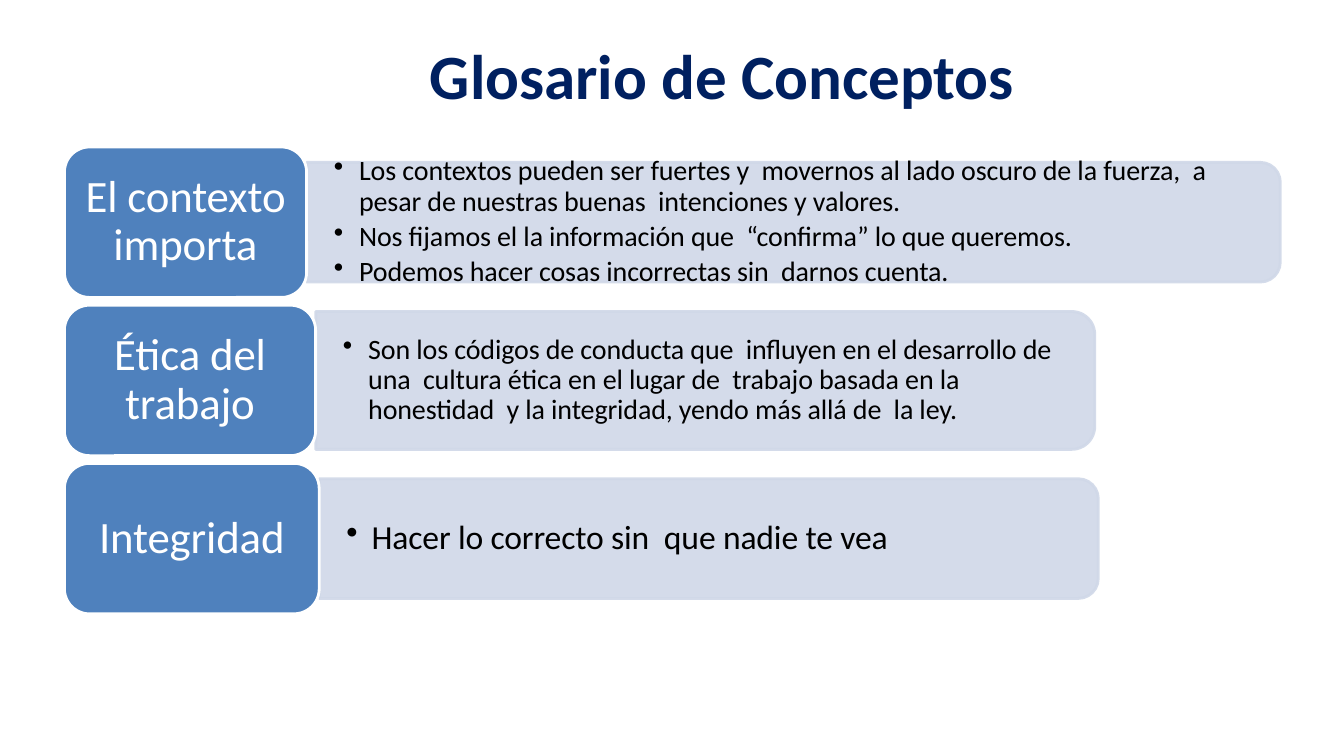
from pptx import Presentation
from pptx.dml.color import RGBColor
from pptx.enum.shapes import MSO_SHAPE as Preset
from pptx.enum.text import MSO_ANCHOR as Anchor, PP_ALIGN as Align
from pptx.oxml.ns import qn
from pptx.util import Pt
from lxml import etree

TITLE = "Glosario de Conceptos"
# term, label width, bar width, bar height, text size, definitions
CONCEPTS = [
    ("El contexto importa", 173, 695.5, 85.5, 20, [
        "Los contextos pueden ser fuertes y  movernos al lado oscuro de la fuerza,  a "
        "pesar de nuestras buenas  intenciones y valores.",
        "Nos fijamos el la información que  “confirma” lo que queremos.",
        "Podemos hacer cosas incorrectas sin  darnos cuenta.",
    ]),
    ("Ética del trabajo", 179.5, 556.5, 98.5, 20, [
        "Son los códigos de conducta que  influyen en el desarrollo de una  cultura ética "
        "en el lugar de  trabajo basada en la honestidad  y la integridad, yendo más allá "
        "de  la ley.",
    ]),
    ("Integridad", 182, 556.5, 85.5, 24, ["Hacer lo correcto sin  que nadie te vea"]),
]
NAVY, BLUE, PALE, WHITE, BLACK = "002060", "4F81BD", "D0D8E8", "FFFFFF", "000000"
LEFT, TOP, PITCH, LABEL_HEIGHT = 46, 105, 113, 107.5
INDENT = 18


def rgb(hex_color):
    return RGBColor.from_string(hex_color)


def write(frame, lines, size, color, spacing, margins, tracking=0, bold=False):
    """Fill a text frame, one paragraph per line; tracking is in hundredths of a point."""
    frame.word_wrap = True
    frame.margin_left = frame.margin_right = Pt(margins[0])
    frame.margin_top = frame.margin_bottom = Pt(margins[1])
    for i, line in enumerate(lines):
        paragraph = frame.add_paragraph() if i else frame.paragraphs[0]
        paragraph.text = line
        paragraph.line_spacing = spacing
        font = paragraph.font
        font.name, font.size, font.bold = "Calibri", Pt(size), bold
        font.color.rgb = rgb(color)
        paragraph._p.pPr.find(qn("a:defRPr")).set("spc", str(tracking))


def add_bullet(paragraph):
    properties = paragraph._p.pPr
    properties.set("marL", str(Pt(INDENT)))
    properties.set("indent", str(-Pt(INDENT)))
    bullet = etree.Element(qn("a:buChar"), char="•")
    properties.find(qn("a:defRPr")).addprevious(bullet)


def add_panel(preset, left, top, width, height, fill, line, opacity=100):
    panel = slide.shapes.add_shape(preset, Pt(left), Pt(top), Pt(width), Pt(height))
    panel.shadow.inherit = False
    panel.fill.solid()
    panel.fill.fore_color.rgb = rgb(fill)
    panel.line.color.rgb = rgb(line)
    panel.line.width = Pt(2)
    if opacity < 100:
        for color in panel._element.spPr.iter(qn("a:srgbClr")):
            etree.SubElement(color, qn("a:alpha"), val=str(opacity * 1000))
    return panel


def add_concept(row, term, label_width, bar_width, bar_height, size, definitions):
    top = TOP + row * PITCH
    middle = top + LABEL_HEIGHT / 2
    bar_left = LEFT + label_width

    # The bar is a tall shape turned a quarter, so its rounded end faces right.
    bar = add_panel(Preset.ROUND_2_SAME_RECTANGLE,
                    bar_left + (bar_width - bar_height) / 2, middle - bar_width / 2,
                    bar_height, bar_width, PALE, PALE, opacity=90)
    bar.rotation = 90

    text_height = bar_height - 8
    body = slide.shapes.add_textbox(Pt(bar_left), Pt(middle - text_height / 2),
                                    Pt(bar_width - 4.5), Pt(text_height)).text_frame
    write(body, definitions, size, BLACK, 0.9, (19.5, 10), tracking=-10)
    body.vertical_anchor = Anchor.MIDDLE
    for paragraph in body.paragraphs:
        paragraph.space_after = Pt(size * 0.18)
        add_bullet(paragraph)

    label = add_panel(Preset.ROUNDED_RECTANGLE, LEFT, top, label_width, LABEL_HEIGHT,
                      BLUE, WHITE).text_frame
    write(label, [term], 32, WHITE, 0.9, (9, 5), tracking=-10)
    label.vertical_anchor = Anchor.MIDDLE
    label.paragraphs[0].alignment = Align.CENTER


deck = Presentation()
deck.slide_width, deck.slide_height = Pt(960), Pt(540)
slide = deck.slides.add_slide(deck.slide_layouts[6])

title = slide.shapes.add_textbox(Pt(300), Pt(33), Pt(660), Pt(97)).text_frame
write(title, [TITLE], 45, NAVY, 0.8, (7.2, 3.6), bold=True)

for row, concept in enumerate(CONCEPTS):
    add_concept(row, *concept)

deck.save("out.pptx")
